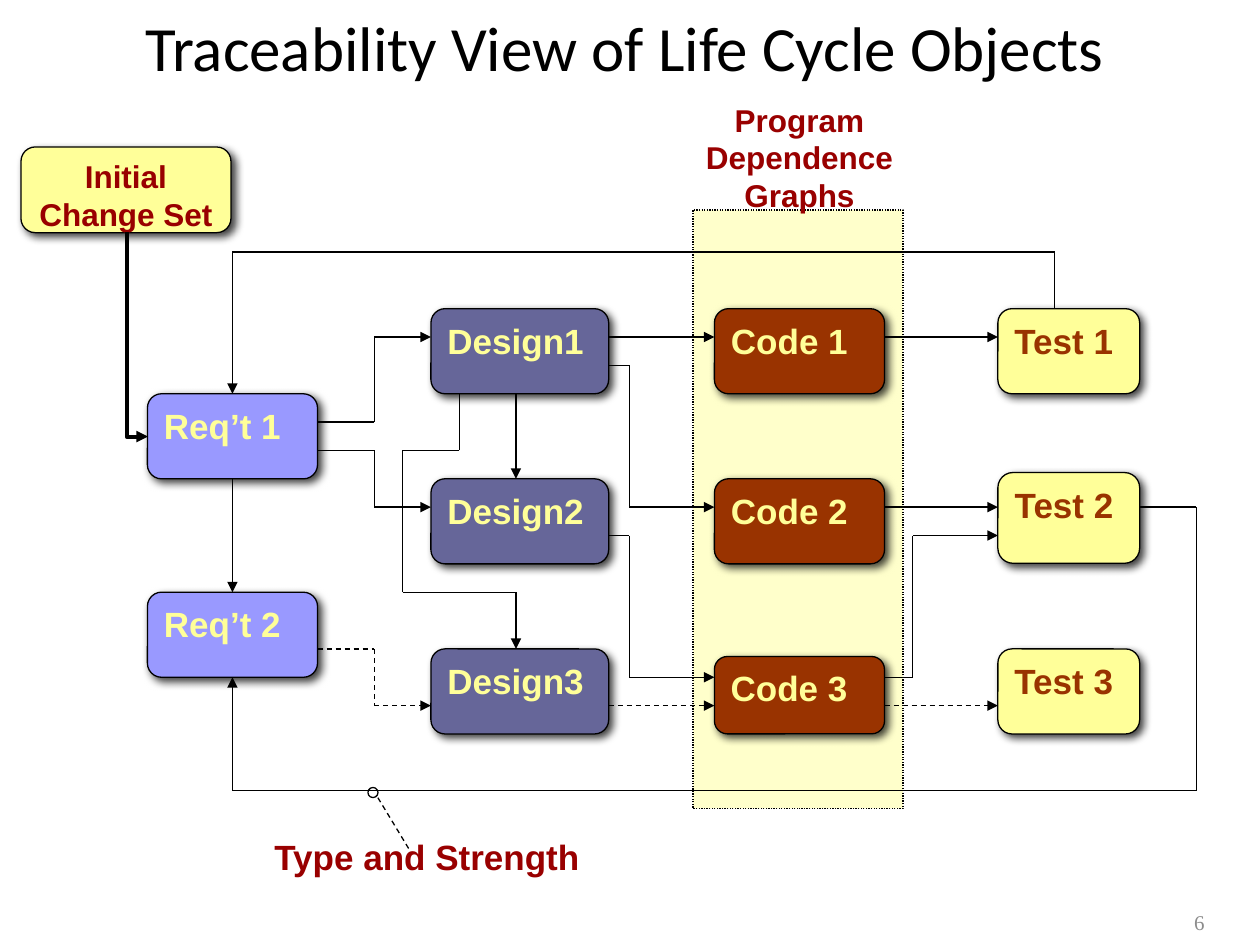
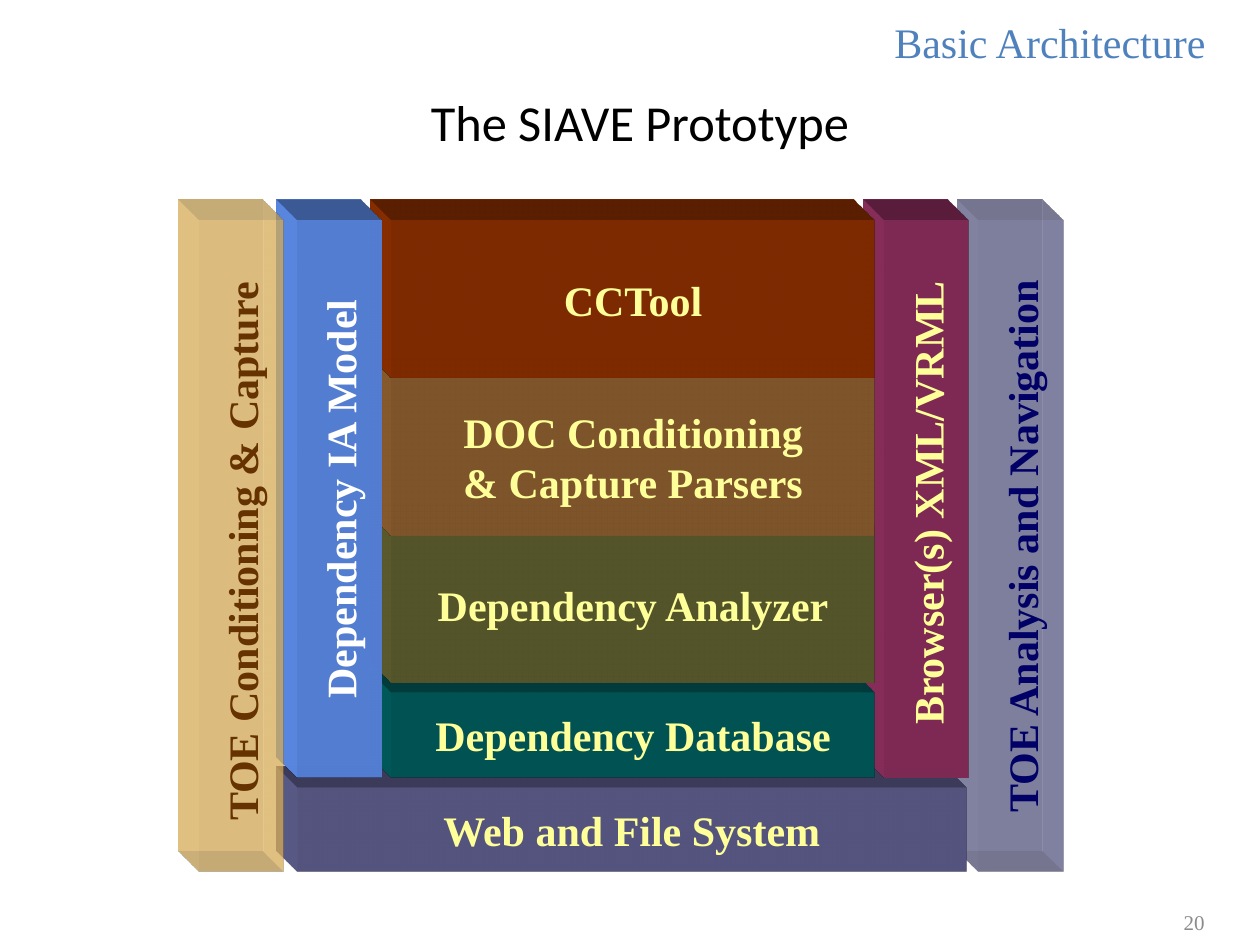
from pptx import Presentation
from pptx.dml.color import RGBColor
from pptx.enum.dml import MSO_LINE_DASH_STYLE as Dash
from pptx.enum.shapes import MSO_CONNECTOR as Link, MSO_SHAPE as Preset
from pptx.enum.text import MSO_ANCHOR as Anchor, MSO_AUTO_SIZE as AutoSize, PP_ALIGN as Align
from pptx.oxml import parse_xml
from pptx.oxml.ns import nsdecls, qn
from pptx.util import Inches, Pt
from lxml.etree import SubElement

BLACK, CREAM, RUST, CRIMSON = "000000", "FFFF99", "993300", "990000"
SANS, SERIF, TITLE_FONT = "Arial", "Times New Roman", "Calibri"
CELL, GRID_LEFT, GRID_TOP = 0.225, 1.17, 2
TOP, LEFT, BOTTOM = 0, 1, 2
THICKNESS = 0.67


def col(n):
    return Inches(GRID_LEFT + CELL * n)


def row(n):
    return Inches(GRID_TOP + CELL * n)


def color(hex_string):
    return RGBColor.from_string(hex_string)


def paint(shape, fill=None, alpha=100, line=None, dash=None):
    shape.shadow.inherit = False
    if fill:
        shape.fill.solid()
        shape.fill.fore_color.rgb = color(fill)
        if alpha < 100:
            tint = shape.fill._xPr.find(qn("a:solidFill"))[0]
            SubElement(tint, qn("a:alpha")).set("val", str(alpha * 1000))
    else:
        shape.fill.background()
    if line:
        shape.line.color.rgb = color(line)
        shape.line.width = Pt(0.75)
        if dash:
            shape.line.dash_style = dash
    else:
        shape.line.fill.background()
    return shape


def write(holder, paragraphs, size, font, ink, bold=False, align=Align.LEFT,
          anchor=Anchor.TOP, wrap=True):
    frame = holder.text_frame
    frame.word_wrap = wrap
    frame.auto_size = AutoSize.NONE
    frame.vertical_anchor = anchor
    for i, text in enumerate(paragraphs):
        paragraph = frame.add_paragraph() if i else frame.paragraphs[0]
        paragraph.alignment = align
        for j, words in enumerate(text.split("\n")):
            if j:
                paragraph.add_line_break()
            run = paragraph.add_run()
            run.text = words
            run.font.size = Pt(size)
            run.font.name = font
            run.font.bold = bold
            run.font.color.rgb = color(ink)


def label(slide, at, paragraphs, size, font, ink, **style):
    box = slide.shapes.add_textbox(*map(Inches, at))
    write(box, paragraphs, size, font, ink, **style)


def new_slide(deck, title, at, size, number):
    slide = deck.slides.add_slide(deck.slide_layouts[5])
    heading = slide.shapes.title
    heading.left, heading.top, heading.width, heading.height = map(Inches, at)
    write(heading, [title], size, TITLE_FONT, BLACK, align=Align.CENTER, anchor=Anchor.MIDDLE)
    label(slide, (7.33, 7.12, 2.33, 0.4), [number], 12, SERIF, "8C8C8C",
          align=Align.RIGHT, anchor=Anchor.MIDDLE)
    return slide


def card(slide, at, text, fill, ink, size=20, align=Align.LEFT):
    box = paint(slide.shapes.add_shape(Preset.ROUNDED_RECTANGLE, *at), fill, line=BLACK)
    effects = box._element.spPr.find(qn("a:effectLst"))
    effects.append(parse_xml(
        f'<a:outerShdw {nsdecls("a")} blurRad="63500" dist="38100" dir="2700000" algn="tl" '
        'rotWithShape="0"><a:srgbClr val="000000"><a:alpha val="75000"/></a:srgbClr></a:outerShdw>'))
    write(box, [text], size, SANS, ink, bold=True, align=align)
    return box


def life_cycle_object(slide, column, line, text, fill, ink, width=6, height=3):
    at = (col(column), row(line), Inches(CELL * width), Inches(CELL * height))
    return card(slide, at, text, fill, ink)


def style_line(connector, width=0.75, dashed=False, arrow=False):
    connector.line.color.rgb = color(BLACK)
    connector.line.width = Pt(width)
    if dashed:
        connector.line.dash_style = Dash.DASH
    properties = connector._element.spPr
    if arrow:
        SubElement(properties.find(qn("a:ln")), qn("a:tailEnd")).set("type", "triangle")
    SubElement(properties, qn("a:effectLst"))


def trace(slide, stops, start=None, end=None, dashed=False, arrow=True):
    last = len(stops) - 2
    for i, ((x1, y1), (x2, y2)) in enumerate(zip(stops, stops[1:])):
        leg = slide.shapes.add_connector(Link.STRAIGHT, col(x1), row(y1), col(x2), row(y2))
        if start and i == 0:
            leg.begin_connect(*start)
        if end and i == last:
            leg.end_connect(*end)
        style_line(leg, dashed=dashed, arrow=arrow and i == last)


def change_arrow(slide, change_set, requirement):
    elbow = slide.shapes.add_connector(Link.ELBOW, Inches(1), Inches(1.84),
                                       Inches(1.17), Inches(3.46))
    elbow.begin_connect(change_set, BOTTOM)
    elbow.end_connect(requirement, LEFT)
    elbow.left, elbow.top, elbow.width, elbow.height = map(Inches, (0.28, 2.57, 1.62, 0.17))
    properties = elbow._element.spPr
    properties.find(qn("a:prstGeom")).set("prst", "bentConnector2")
    frame = properties.find(qn("a:xfrm"))
    frame.set("rot", "16200000")
    frame.set("flipH", "1")
    style_line(elbow, width=2.25, arrow=True)


def traceability_slide(deck):
    slide = new_slide(deck, "Traceability View of Life Cycle Objects",
                      (0.67, 0.08, 8.58, 0.58), 36, "6")
    graphs = slide.shapes.add_shape(Preset.RECTANGLE, *map(Inches, (5.5, 5 / 3, 5 / 3, 4.75)))
    paint(graphs, CREAM, 50, BLACK, Dash.ROUND_DOT)
    label(slide, (5.5, 0.75, 1.69, 1), ["Program\nDependence", "Graphs"], 18, SANS, CRIMSON,
          bold=True, align=Align.CENTER, wrap=False)

    req1, req2 = (life_cycle_object(slide, 0, line, f"Req’t {n}", "9999FF", CREAM)
                  for n, line in ((1, 5), (2, 12)))
    for n, line in ((1, 2), (2, 8), (3, 14)):
        life_cycle_object(slide, 10, line, f"Design{n}", "666699", CREAM, width=6.27)
    for n, line, height in ((1, 2, 3), (2, 8, 3), (3, 14.27, 2.73)):
        life_cycle_object(slide, 20, line, f"Code {n}", RUST, CREAM, height=height)
    for n, line, height in ((1, 2, 3), (2, 7.78, 3.2), (3, 14, 3)):
        life_cycle_object(slide, 30, line, f"Test {n}", CREAM, RUST, 5, height)
    change_set = card(slide, tuple(map(Inches, (1 / 6, 7 / 6, 5 / 3, 0.68))),
                      "Initial Change Set", CREAM, CRIMSON, 18, Align.CENTER)
    change_arrow(slide, change_set, req1)

    design_edge = 16.27
    for stops in (
        [(6, 6), (8, 6), (8, 3), (10, 3)],
        [(6, 7), (8, 7), (8, 9), (10, 9)],
        [(13, 5), (13, 8)],
        [(11, 5), (11, 7), (9, 7), (9, 12), (13, 12), (13, 14)],
        [(design_edge, 3), (20, 3)],
        [(design_edge, 4), (17, 4), (17, 9), (20, 9)],
        [(design_edge, 10), (17, 10), (17, 15), (20, 15)],
        [(26, 3), (30, 3)],
        [(26, 9), (30, 9)],
        [(26, 15), (27, 15), (27, 10), (30, 10)],
    ):
        trace(slide, stops)
    for stops in (
        [(6, 14), (8, 14), (8, 16), (10, 16)],
        [(design_edge, 16), (20, 16)],
        [(26, 16), (30, 16)],
    ):
        trace(slide, stops, dashed=True)
    trace(slide, [(3, 8), (3, 12)], (req1, BOTTOM), (req2, TOP))
    trace(slide, [(32, 2), (32, 0), (3, 0), (3, 5)], end=(req1, TOP))
    trace(slide, [(35, 9), (37, 9), (37, 19), (3, 19), (3, 15)], end=(req2, BOTTOM))

    label(slide, (2.08, 6.58, 2.64, 0.43), ["Type and Strength"], 20, SANS, CRIMSON,
          bold=True, wrap=False)
    trace(slide, [(8.13, 19.25), (9.25, 21.1)], dashed=True, arrow=False)
    marker = slide.shapes.add_shape(Preset.OVAL, *map(Inches, (2.92, 6.25, 0.08, 0.08)))
    paint(marker, line=BLACK)


def extrude(shape, fill):
    properties = shape._element.spPr
    properties.append(parse_xml(
        f'<a:scene3d {nsdecls("a")}><a:camera prst="legacyObliqueTopLeft"/>'
        '<a:lightRig rig="legacyFlat3" dir="b"/></a:scene3d>'))
    properties.append(parse_xml(
        f'<a:sp3d {nsdecls("a")} extrusionH="430200" prstMaterial="legacyMatte">'
        '<a:bevelT w="13500" h="13500" prst="angle"/><a:bevelB w="13500" h="13500" prst="angle"/>'
        f'<a:extrusionClr><a:srgbClr val="{fill}"/></a:extrusionClr></a:sp3d>'))


def block(slide, at, text, fill, ink=CREAM, alpha=100, rotation=0):
    front = slide.shapes.add_shape(Preset.RECTANGLE, *map(Inches, at))
    front.rotation = rotation
    paint(front, fill, alpha)
    extrude(front, fill)
    write(front, [text], 24, SERIF, ink, bold=True, align=Align.CENTER,
          anchor=Anchor.MIDDLE, wrap=False)


def pillar(slide, left, height, text, fill, ink, alpha=100):
    shift = (height - THICKNESS) / 2
    block(slide, (left - shift, 1.75 + shift, height, THICKNESS), text, fill, ink, alpha, 270)


def layer(slide, top, height, text, fill):
    block(slide, (3.11, top, 3.83, height), text, fill)


def architecture_slide(deck):
    slide = new_slide(deck, "The SIAVE Prototype ", (0.5, 0.67, 9.25, 0.58), 28.8, "20")
    pillar(slide, 7.77, 5.17, "TOE Analysis and Navigation", "666699", "000066", 50)
    block(slide, (2.36, 6.25, 5.31, THICKNESS), "Web and File System", "666699")
    pillar(slide, 7.02, 4.42, "Browser(s) XML/VRML ", "993366", CREAM)
    layer(slide, 5.5, THICKNESS, "Dependency Database", "006666")
    layer(slide, 4.17, 1.25, "Dependency Analyzer", "666633")
    layer(slide, 3, 1.25, "DOC Conditioning\n& Capture Parsers", "996633")
    layer(slide, 1.75, 1.25, "CCTool", RUST)
    pillar(slide, 2.36, 4.42, "Dependency IA Model", "6699FF", "FFFFFF")
    pillar(slide, 1.58, 5.17, "TOE Conditioning & Capture ", "FFCC66", "663300", 50)
    label(slide, (7, 0.08, 3, 0.5), ["Basic Architecture"], 24, SERIF, "4F81BD")


def main():
    deck = Presentation()
    deck.slide_width, deck.slide_height = Inches(10), Inches(7.5)
    traceability_slide(deck)
    architecture_slide(deck)
    deck.save("out.pptx")


if __name__ == "__main__":
    main()
